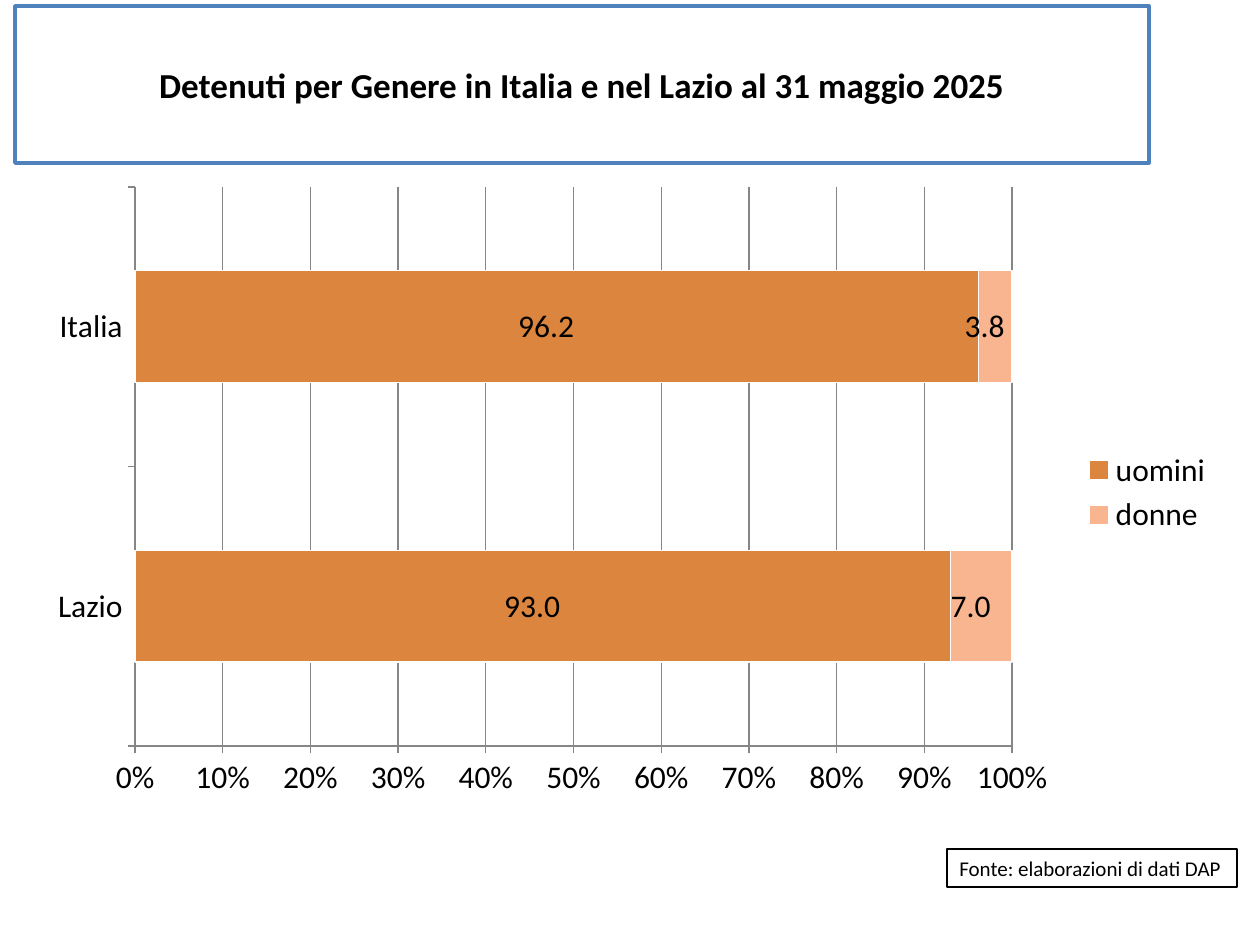
from dataclasses import dataclass

from lxml import etree
from pptx import Presentation
from pptx import util as u
from pptx.chart.data import CategoryChartData
from pptx.dml.color import RGBColor
from pptx.enum import chart as charts, shapes, text
from pptx.oxml.ns import qn

EMU_PER_PX = 914400 / 126
FONT = "Calibri"
COLORS = {
    "white": "FFFFFF",
    "black": "000000",
    "frame": "4F81BD",
    "axis": "868686",
    "men": "DC853E",
    "women": "F9B590",
}
NUMBER_FORMAT = r"_-* #,##0.0\ _€_-;\-* #,##0.0\ _€_-"


@dataclass(frozen=True)
class Area:
    left: int
    top: int
    width: int
    height: int

    def emu(self) -> list[int]:
        return [px(n) for n in (self.left, self.top, self.width, self.height)]


@dataclass(frozen=True)
class Label:
    words: str
    area: Area
    border: str
    border_pt: float
    frame: dict
    font: dict
    align: text.PP_ALIGN


@dataclass(frozen=True)
class Series:
    name: str
    values: tuple[float, ...]
    color: str


def px(count: int) -> int:
    return round(count * EMU_PER_PX)


def rgb(name: str) -> RGBColor:
    return RGBColor.from_string(COLORS[name])


def apply(target, values: dict) -> None:
    for name, value in values.items():
        setattr(target, name, value)


def style_line(line, color: str, points: float) -> None:
    line.color.rgb = rgb(color)
    line.width = u.Pt(points)


def style_font(font, **values) -> None:
    apply(font, {"name": FONT, **values})
    font.color.rgb = rgb("black")


def draw_label(page, label: Label) -> None:
    box = page.shapes.add_shape(shapes.MSO_SHAPE.RECTANGLE, *label.area.emu())
    box.shadow.inherit = False
    box.fill.solid()
    box.fill.fore_color.rgb = rgb("white")
    style_line(box.line, label.border, label.border_pt)
    apply(box.text_frame, label.frame)
    para = box.text_frame.paragraphs[0]
    para.alignment = label.align
    span = para.add_run()
    span.text = label.words
    style_font(span.font, **label.font)


def place_plot(chart, area: Area, plot: Area) -> None:
    """Fix the inner plot area, as fractions of the chart area."""
    plot_area = chart._chartSpace.chart.plotArea
    for old in plot_area.findall(qn("c:layout")):
        plot_area.remove(old)
    layout = etree.Element(qn("c:layout"))
    manual = etree.SubElement(layout, qn("c:manualLayout"))
    entries = {
        "layoutTarget": "inner",
        "xMode": "edge",
        "yMode": "edge",
        "x": round((plot.left - area.left) / area.width, 4),
        "y": round((plot.top - area.top) / area.height, 4),
        "w": round(plot.width / area.width, 4),
        "h": round(plot.height / area.height, 4),
    }
    for tag, value in entries.items():
        etree.SubElement(manual, qn(f"c:{tag}")).set("val", str(value))
    plot_area.insert(0, layout)


def draw_chart(page, area: Area, plot_area: Area, categories: list[str], rows: list[Series]) -> None:
    data = CategoryChartData(number_format="0.0")
    data.categories = categories
    for row in rows:
        data.add_series(row.name, row.values)
    kind = charts.XL_CHART_TYPE.BAR_STACKED_100
    chart = page.shapes.add_chart(kind, *area.emu(), data).chart
    apply(chart, {"has_title": False, "has_legend": True})
    style_font(chart.font, size=u.Pt(18))
    apply(chart.legend, {"position": charts.XL_LEGEND_POSITION.RIGHT, "include_in_layout": False})
    place_plot(chart, area, plot_area)

    # Bars and their values
    plot = chart.plots[0]
    apply(plot, {"gap_width": 150, "overlap": 100, "vary_by_categories": False})
    for series, row in zip(plot.series, rows):
        series.format.fill.solid()
        series.format.fill.fore_color.rgb = rgb(row.color)
        style_line(series.format.line, "white", 0.75)
        apply(series.data_labels, {
            "show_value": True,
            "position": charts.XL_LABEL_POSITION.CENTER,
            "number_format": NUMBER_FORMAT,
            "number_format_is_linked": False,
        })
        style_font(series.data_labels.font, size=u.Pt(18))

    # Axes and grid
    for axis in (chart.category_axis, chart.value_axis):
        axis.major_tick_mark = charts.XL_TICK_MARK.OUTSIDE
        style_line(axis.format.line, "axis", 0.75)
    scale = chart.value_axis
    apply(scale, {"minimum_scale": 0, "maximum_scale": 1, "major_unit": 0.1, "has_major_gridlines": True})
    apply(scale.tick_labels, {"number_format": "0%", "number_format_is_linked": False})
    style_line(scale.major_gridlines.format.line, "axis", 0.75)


def main() -> None:
    deck = Presentation()
    apply(deck, {"slide_width": px(1260), "slide_height": px(945)})
    page = deck.slides.add_slide(deck.slide_layouts[6])

    # Title and source note
    labels = [
        Label("Detenuti per Genere in Italia e nel Lazio al 31 maggio 2025",
              Area(15, 6, 1134, 157), "frame", 2,
              {"word_wrap": True, "vertical_anchor": text.MSO_ANCHOR.MIDDLE},
              {"size": u.Pt(20), "bold": True}, text.PP_ALIGN.CENTER),
        Label("Fonte: elaborazioni di dati DAP",
              Area(947, 849, 290, 38), "black", 0.75,
              {"word_wrap": False, "vertical_anchor": text.MSO_ANCHOR.TOP,
               "auto_size": text.MSO_AUTO_SIZE.SHAPE_TO_FIT_TEXT},
              {"size": u.Pt(12)}, text.PP_ALIGN.LEFT),
    ]
    for label in labels:
        draw_label(page, label)

    # Share of men and women
    draw_chart(page, Area(35, 175, 1191, 635), Area(135, 187, 877, 559), ["Lazio", "Italia"],
               [Series("uomini", (93.0, 96.2), "men"), Series("donne", (7.0, 3.8), "women")])
    deck.save("out.pptx")


if __name__ == "__main__":
    main()
